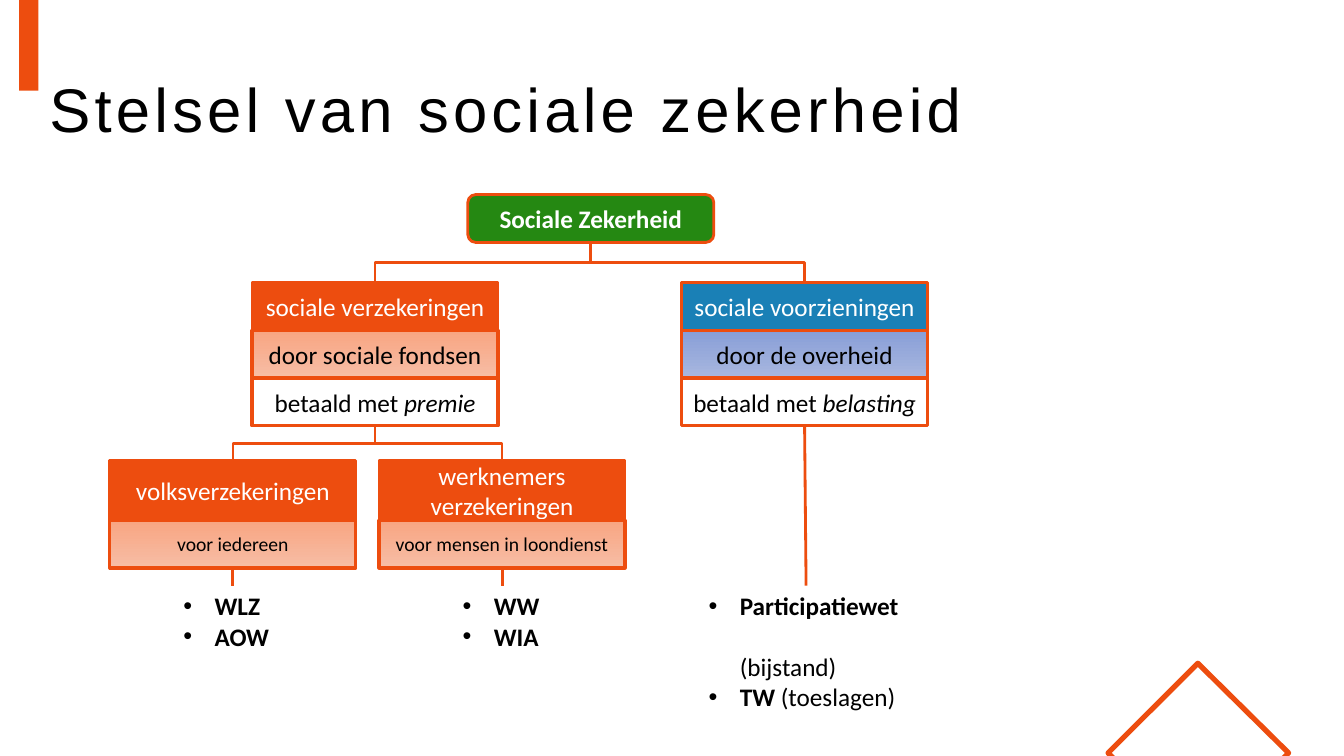
from dataclasses import dataclass

from lxml import etree
from pptx import Presentation
from pptx import util as u
from pptx.dml.color import RGBColor
from pptx.enum import shapes, text
from pptx.oxml.ns import qn

In, Pt = u.Inches, u.Pt


@dataclass(frozen=True)
class Theme:
    orange: str = "ED4D0F"
    green: str = "258812"
    blue: str = "1A80B6"
    white: str = "FFFFFF"
    black: str = "000000"
    peach: tuple = ("F8A582", "F7BDA5")
    lilac: tuple = ("889ED7", "A8B7DF")
    head: str = "Arial"
    body: str = "Calibri"
    big: int = 44
    mid: int = 18
    small: int = 14
    thin: float = 2
    thick: float = 2.25
    frame: float = 3.75


T = Theme()
WIDE, ROW, HIGH = 2.44, 0.475, 0.59
ROOT_X, LEFT_X, RIGHT_X = 5.86, 3.72, 7.98
FOLK_X, WORK_X = 2.31, 4.98
ROOT_Y, MID_Y, LOW_Y, LIST_Y = 1.93, 2.8, 4.57, 5.81


def rgb(code):
    return RGBColor.from_string(code)


def style(font, size, color, name=T.body):
    font.name, font.size = name, Pt(size)
    font.color.rgb = rgb(color)


def paint(fill, color):
    """Fill with one colour, or from top to bottom with a pair."""
    if isinstance(color, tuple):
        fill.gradient()
        fill.gradient_angle = 270
        for stop, code in zip(fill.gradient_stops, color):
            stop.color.rgb = rgb(code)
    else:
        fill.solid()
        fill.fore_color.rgb = rgb(color)


def edge(line, width):
    line.color.rgb = rgb(T.orange)
    line.width = Pt(width)


def add_title(slide, words):
    title = slide.shapes.title
    title.left, title.top = In(0.39), In(0.39)
    title.width, title.height = In(12.61), In(1.45)
    frame = title.text_frame
    frame.vertical_anchor = text.MSO_ANCHOR.MIDDLE
    para = frame.paragraphs[0]
    para.alignment = text.PP_ALIGN.LEFT
    para.line_spacing = 0.9
    run = para.add_run()
    run.text = words
    style(run.font, T.big, T.black, T.head)
    run.font._element.set("spc", "300")


def add_decor(slide):
    bar = slide.shapes.add_shape(
        shapes.MSO_SHAPE.RECTANGLE, In(0.19), In(-0.25), In(0.19), In(1.15))
    bar.shadow.inherit = False
    paint(bar.fill, T.orange)
    bar.line.fill.background()

    path = [(12.69, 7.56), (11.08, 7.56), (10.99, 7.47),
            (11.88, 6.58), (12.78, 7.47)]
    first, *rest = [(In(x), In(y)) for x, y in path]
    build = slide.shapes.build_freeform(*first)
    build.add_line_segments(rest, close=True)
    corner = build.convert_to_shape()
    corner.shadow.inherit = False
    corner.fill.background()
    edge(corner.line, T.frame)


def add_box(slide, mid, top, words, fill, color=T.black, size=T.mid,
            high=ROW, width=T.thick, italic="",
            kind=shapes.MSO_SHAPE.RECTANGLE):
    """Add a box centred on mid, its words closed by an italic part."""
    box = slide.shapes.add_shape(
        kind, In(mid - WIDE / 2), In(top), In(WIDE), In(high))
    box.shadow.inherit = False
    paint(box.fill, fill)
    edge(box.line, width)
    frame = box.text_frame
    frame.word_wrap = True
    frame.vertical_anchor = text.MSO_ANCHOR.MIDDLE
    frame.margin_left = frame.margin_right = In(0.05)
    frame.margin_top = frame.margin_bottom = 0
    para = frame.paragraphs[0]
    para.text = words
    para.alignment = text.PP_ALIGN.CENTER
    style(para.font, size, color)
    if italic:
        run = para.add_run()
        run.text = italic
        run.font.italic = True
    return box


def add_list(slide, left, wide, high, items):
    """Add a bulleted list; each item is a bold and a plain part."""
    box = slide.shapes.add_textbox(In(left), In(LIST_Y), In(wide), In(high))
    frame = box.text_frame
    frame.word_wrap = True
    for num, (bold, plain) in enumerate(items):
        para = frame.add_paragraph() if num else frame.paragraphs[0]
        para.text = bold
        style(para.font, T.mid, T.black)
        para.runs[0].font.bold = True
        if plain:
            para.add_run().text = plain
        props = para._p.get_or_add_pPr()
        props.set("marL", str(In(0.31)))
        props.set("indent", str(In(-0.31)))
        font = etree.Element(qn("a:buFont"), typeface=T.head)
        mark = etree.Element(qn("a:buChar"), char="•")
        props.insert(0, font)
        props.insert(1, mark)
    return box


def add_line(slide, kind, *ends):
    line = slide.shapes.add_connector(kind, *map(In, ends))
    edge(line.line, T.thin)
    etree.SubElement(line._element.spPr, qn("a:effectLst"))
    return line


def add_fork(slide, x, y, goal, low):
    """Add an elbow that runs down, across to goal and down again."""
    mid_x, mid_y = (x + goal) / 2, (y + low) / 2
    half, side = (low - y) / 2, abs(goal - x) / 2
    turn = 90
    if goal > x:
        half, turn = -half, 270
    # The frame lies on its side and is turned upright about its centre.
    line = add_line(slide, shapes.MSO_CONNECTOR.ELBOW,
                    mid_x - half, mid_y - side, mid_x + half, mid_y + side)
    line._element.spPr.find(qn("a:xfrm")).set("rot", str(turn * 60000))


def add_link(slide, box, goal):
    line = add_line(slide, shapes.MSO_CONNECTOR.STRAIGHT, 0, 0, 1, 1)
    line.begin_connect(box, 2)
    line.end_connect(goal, 0)


def main():
    deck = Presentation()
    deck.slide_width, deck.slide_height = In(13.33), In(7.5)
    slide = deck.slides.add_slide(deck.slide_layouts[5])
    add_decor(slide)
    add_title(slide, "Stelsel van sociale zekerheid")

    for goal in (LEFT_X, RIGHT_X):
        add_fork(slide, ROOT_X, ROOT_Y + ROW, goal, MID_Y)
    for goal in (FOLK_X, WORK_X):
        add_fork(slide, LEFT_X, MID_Y + 3 * ROW, goal, LOW_Y)

    add_box(slide, ROOT_X, ROOT_Y, "Sociale Zekerheid", T.green, T.white,
            width=T.thin, kind=shapes.MSO_SHAPE.ROUNDED_RECTANGLE
            ).text_frame.paragraphs[0].font.bold = True

    groups = [
        (LEFT_X, "sociale verzekeringen", T.orange,
         "door sociale fondsen", T.peach, "premie", T.thick),
        (RIGHT_X, "sociale voorzieningen", T.blue,
         "door de overheid", T.lilac, "belasting", T.thin)]
    for mid, name, fill, payer, tint, means, width in groups:
        state = add_box(slide, mid, MID_Y + 2 * ROW, "betaald met ", T.white,
                        italic=means, width=width)
        add_box(slide, mid, MID_Y, name, fill, T.white, width=T.thin)
        add_box(slide, mid, MID_Y + ROW, payer, tint)

    laws = add_list(slide, 6.93, 2.13, 1.01,
                    [("Participatiewet \v", "(bijstand)"),
                     ("TW", " (toeslagen)")])
    add_link(slide, state, laws)

    kinds = [
        (FOLK_X, "volksverzekeringen", "voor iedereen",
         1.72, 1.18, ("WLZ", "AOW")),
        (WORK_X, "werknemers\vverzekeringen", "voor mensen in loondienst",
         4.49, 0.98, ("WW", "WIA"))]
    for mid, name, who, left, wide, acts in kinds:
        add_box(slide, mid, LOW_Y, name, T.orange, T.white,
                high=HIGH, width=T.thin)
        group = add_box(slide, mid, LOW_Y + HIGH, who, T.peach, size=T.small)
        laws = add_list(slide, left, wide, 0.71, [(act, "") for act in acts])
        add_link(slide, group, laws)

    deck.save("out.pptx")


if __name__ == "__main__":
    main()
